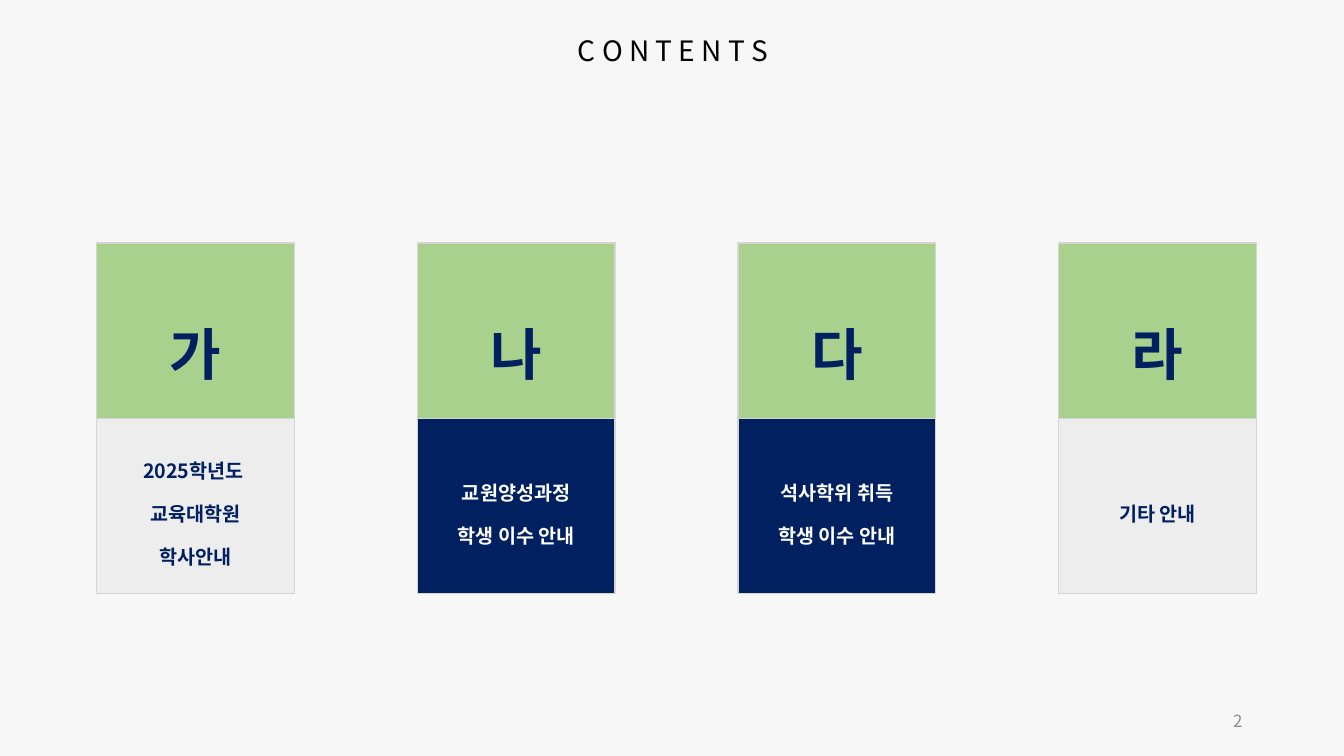
from dataclasses import dataclass

from lxml.etree import SubElement
from pptx import Presentation
from pptx.dml.color import RGBColor
from pptx.enum.text import MSO_ANCHOR as Anchor, PP_ALIGN as Align
from pptx.oxml.ns import qn
from pptx.slide import Slide
from pptx.table import _Cell as Cell
from pptx.text.text import TextFrame
from pptx.util import Pt

PX = 9144  # 100 px to the inch
FONT = "Noto Sans CJK KR"
BLACK = RGBColor(0x00, 0x00, 0x00)
WHITE = RGBColor(0xFF, 0xFF, 0xFF)
BACKGROUND = RGBColor(0xF7, 0xF7, 0xF7)
NAVY = RGBColor(0x00, 0x20, 0x60)
GREEN = RGBColor(0xA9, 0xD1, 0x8E)
PALE_GRAY = RGBColor(0xED, 0xED, 0xED)
PAGE_GRAY = RGBColor(0x8C, 0x8C, 0x8C)
BORDER = RGBColor(0xD9, 0xD4, 0xD1)

CARD_LEFT, CARD_TOP, CARD_PITCH = 96, 241, 318
CARD_WIDTH, ROW_HEIGHT = 196, 174


@dataclass(frozen=True)
class Card:
    letter: str
    lines: tuple[str, ...]
    fill: RGBColor = PALE_GRAY
    color: RGBColor = NAVY


CARDS = (
    Card("가", ("2025학년도 ", "교육대학원", "학사안내")),
    Card("나", ("교원양성과정", "학생 이수 안내"), NAVY, WHITE),
    Card("다", ("석사학위 취득", "학생 이수 안내"), NAVY, WHITE),
    Card("라", ("기타 안내",)),
)


def write(tf: TextFrame, *lines: str, size: int, color: RGBColor,
          bold: bool = False, align: Align = Align.CENTER,
          spacing: float = 1.0) -> None:
    """Write one paragraph per line, with the font set for Latin and Korean."""
    for i, line in enumerate(lines):
        p = tf.add_paragraph() if i else tf.paragraphs[0]
        p.alignment = align
        p.line_spacing = spacing
        r = p.add_run()
        r.text = line
        r.font.size = Pt(size)
        r.font.bold = bold
        r.font.color.rgb = color
        r.font.name = FONT
        SubElement(r.font._element, qn("a:ea"), typeface=FONT)


def add_text(slide: Slide, text: str, left: int, top: int, width: int,
             height: int, *, size: int, color: RGBColor,
             align: Align = Align.CENTER, anchor: Anchor = Anchor.TOP) -> None:
    sp = slide.shapes.add_textbox(left * PX, top * PX, width * PX, height * PX)
    tf = sp.text_frame
    tf.word_wrap = True
    tf.vertical_anchor = anchor
    write(tf, text, size=size, color=color, align=align)


def style_cell(cell: Cell, fill: RGBColor) -> None:
    """Border and fill a cell; the schema wants the borders first."""
    tc_pr = cell._tc.get_or_add_tcPr()
    for side in "LRTB":
        ln = SubElement(tc_pr, qn(f"a:ln{side}"), w=str(Pt(1)))
        solid = SubElement(ln, qn("a:solidFill"))
        SubElement(solid, qn("a:srgbClr"), val=str(BORDER))
    cell.fill.solid()
    cell.fill.fore_color.rgb = fill
    cell.vertical_anchor = Anchor.MIDDLE


def add_card(slide: Slide, card: Card, left: int) -> None:
    table = slide.shapes.add_table(
        2, 1, left * PX, CARD_TOP * PX, CARD_WIDTH * PX, 2 * ROW_HEIGHT * PX
    ).table
    table.first_row = table.horz_banding = False
    head, body = table.cell(0, 0), table.cell(1, 0)
    style_cell(head, GREEN)
    write(head.text_frame, card.letter, size=40, color=NAVY, bold=True, spacing=1.5)
    style_cell(body, card.fill)
    write(body.text_frame, *card.lines, size=14, color=card.color, bold=True,
          spacing=1.5)


def main() -> None:
    prs = Presentation()
    prs.slide_width, prs.slide_height = 1333 * PX, 750 * PX
    slide = prs.slides.add_slide(prs.slide_layouts[6])
    slide.background.fill.solid()
    slide.background.fill.fore_color.rgb = BACKGROUND

    add_text(slide, "C O N T E N T S", 441, 28, 453, 44, size=20, color=BLACK)
    for i, card in enumerate(CARDS):
        add_card(slide, card, CARD_LEFT + i * CARD_PITCH)
    add_text(slide, "2", 942, 695, 300, 40, size=12, color=PAGE_GRAY,
             align=Align.RIGHT, anchor=Anchor.MIDDLE)
    prs.save("out.pptx")


if __name__ == "__main__":
    main()
